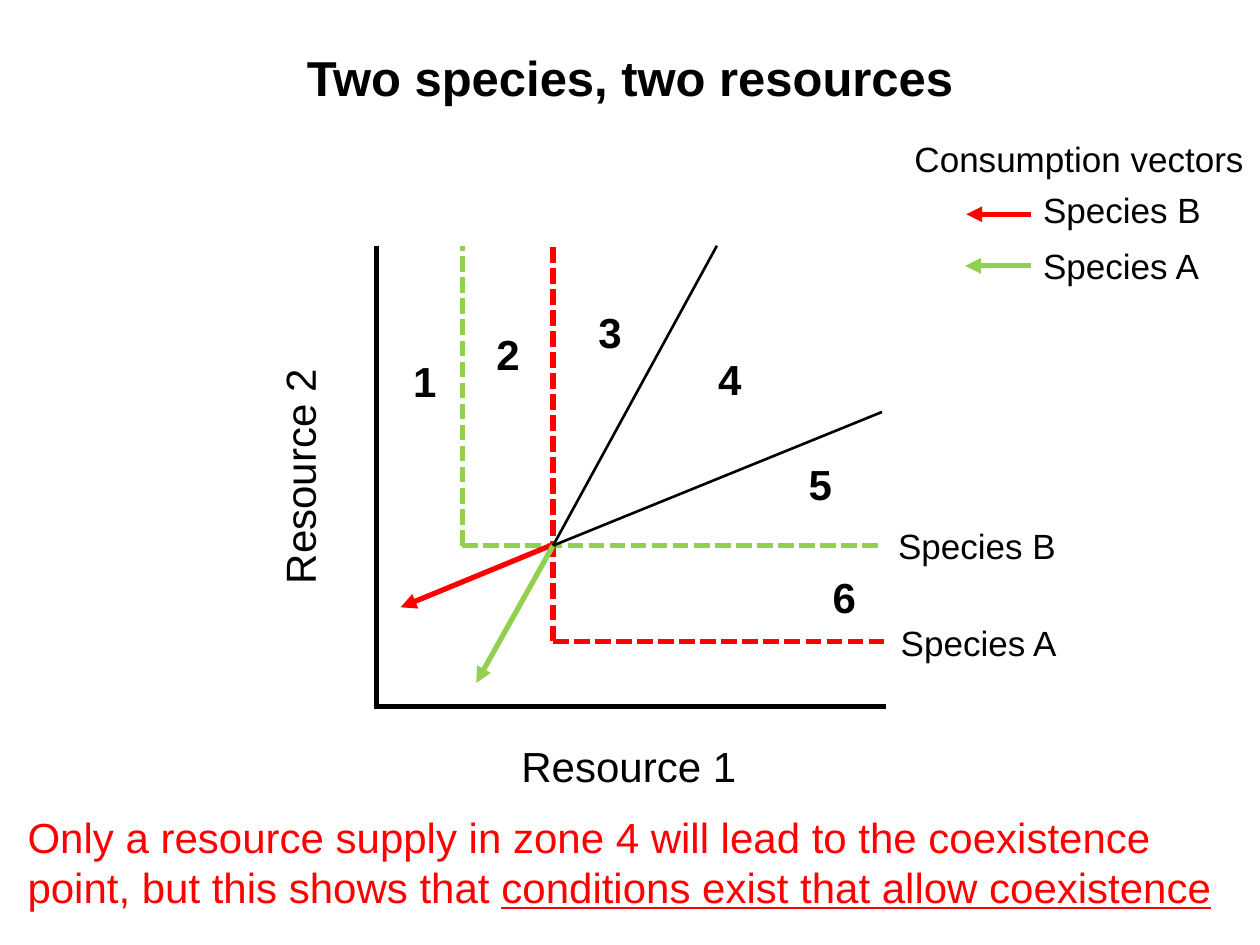
"""Build the slide on two species competing for two resources."""
from lxml.etree import SubElement
from pptx import Presentation
from pptx.dml.color import RGBColor
from pptx.enum.dml import MSO_LINE
from pptx.enum.shapes import MSO_CONNECTOR
from pptx.enum.text import MSO_ANCHOR, MSO_AUTO_SIZE as AUTO, PP_ALIGN
from pptx.oxml.ns import qn
from pptx.util import Inches, Pt

BLACK = RGBColor(0x00, 0x00, 0x00)
RED = RGBColor(0xFF, 0x00, 0x00)
GREEN = RGBColor(0x92, 0xD0, 0x50)

TITLE = "Two species, two resources"
CONCLUSION = [
    ("Only a resource supply in zone 4 will lead to the coexistence point, but this shows that ", False),
    ("conditions exist that allow coexistence", True),
]

COEXISTENCE = (4.39, 4.33)
TOP = 1.95
GREEN_CORNER = (3.67, 4.33)
RED_CORNER = (4.39, 5.09)

AXES = [((2.99, TOP), (2.99, 5.61)), ((2.97, 5.61), (7.03, 5.61))]
ISOCLINES = [(GREEN_CORNER, 7, GREEN), (RED_CORNER, 7.03, RED)]
VECTORS = [
    ((4.37, 4.33), (3.18, 4.82), RED),
    (COEXISTENCE, (3.78, 5.42), GREEN),
    ((8.18, 1.7), (7.67, 1.7), RED),
    ((8.18, 2.11), (7.66, 2.11), GREEN),
]
ZONE_BORDERS = [(7, 3.27), (5.69, TOP)]

AXIS_LABELS = [("Resource 1", 4.04, 5.83, 0), ("Resource 2", 1.41, 3.52, 270)]
SPECIES_LABELS = [
    ("Species A", 7.05, 4.88, 1.45),
    ("Species B", 7.03, 4.11, 1.47),
    ("Species A", 8.18, 1.89, 1.45),
    ("Species B", 8.18, 1.45, 1.47),
    ("Consumption vectors", 7.16, 1.04, 2.84),
]
ZONES = [(3.18, 2.77), (3.84, 2.56), (4.65, 2.38), (5.6, 2.76), (6.32, 3.59), (6.51, 4.49)]


def add_run(paragraph, text, size, color=BLACK, bold=False, underline=None):
    run = paragraph.add_run()
    run.text = text
    font = run.font
    font.name, font.size, font.bold, font.underline = "Arial", Pt(size), bold, underline
    font.color.rgb = color


def add_box(slide, left, top, width, height, wrap=False):
    box = slide.shapes.add_textbox(*map(Inches, (left, top, width, height)))
    box.text_frame.word_wrap = wrap
    box.text_frame.auto_size = AUTO.SHAPE_TO_FIT_TEXT
    return box


def add_label(slide, text, left, top, width, height, size, bold=False, rotation=0):
    label = add_box(slide, left, top, width, height)
    label.rotation = rotation
    add_run(label.text_frame.paragraphs[0], text, size, bold=bold)


def add_line(slide, start, end, color=BLACK, width=3, dashed=False, arrow=False):
    connector = slide.shapes.add_connector(MSO_CONNECTOR.STRAIGHT, *map(Inches, (*start, *end)))
    line = connector.line
    line.color.rgb = color
    line.width = Pt(width)
    if dashed:
        line.dash_style = MSO_LINE.SQUARE_DOT
    properties = connector._element.spPr
    if arrow:
        SubElement(properties.find(qn("a:ln")), qn("a:tailEnd"), type="triangle")
    SubElement(properties, qn("a:effectLst"))


def add_title(slide):
    title = slide.shapes.title
    title.left, title.top, title.width, title.height = map(Inches, (0.5, 0.33, 9, 0.57))
    frame = title.text_frame
    frame.auto_size = AUTO.NONE
    frame.vertical_anchor = MSO_ANCHOR.TOP
    heading = frame.paragraphs[0]
    heading.alignment = PP_ALIGN.CENTER
    add_run(heading, TITLE, 28, bold=True)


def add_graph(slide):
    for start, end in AXES:
        add_line(slide, start, end)
    for corner, right, color in ISOCLINES:
        for end in ((right, corner[1]), (corner[0], TOP)):
            add_line(slide, corner, end, color, dashed=True)
    for start, end, color in VECTORS:
        add_line(slide, start, end, color, arrow=True)
    for end in ZONE_BORDERS:
        add_line(slide, COEXISTENCE, end, width=1.5)


def add_labels(slide):
    for text, left, top, rotation in AXIS_LABELS:
        add_label(slide, text, left, top, 1.93, 0.5, 24, rotation=rotation)
    for text, left, top, width in SPECIES_LABELS:
        add_label(slide, text, left, top, width, 0.44, 20)
    for number, (left, top) in enumerate(ZONES, 1):
        add_label(slide, str(number), left, top, 0.39, 0.5, 24, bold=True)


def add_conclusion(slide):
    conclusion = add_box(slide, 0.12, 6.39, 9.75, 0.91, wrap=True)
    for text, underline in CONCLUSION:
        add_run(conclusion.text_frame.paragraphs[0], text, 24, RED, underline=underline)


def main():
    deck = Presentation()
    deck.slide_width, deck.slide_height = Inches(10), Inches(7.5)
    slide = deck.slides.add_slide(deck.slide_layouts[5])
    add_title(slide)
    add_graph(slide)
    add_labels(slide)
    add_conclusion(slide)
    deck.save("out.pptx")


if __name__ == "__main__":
    main()
